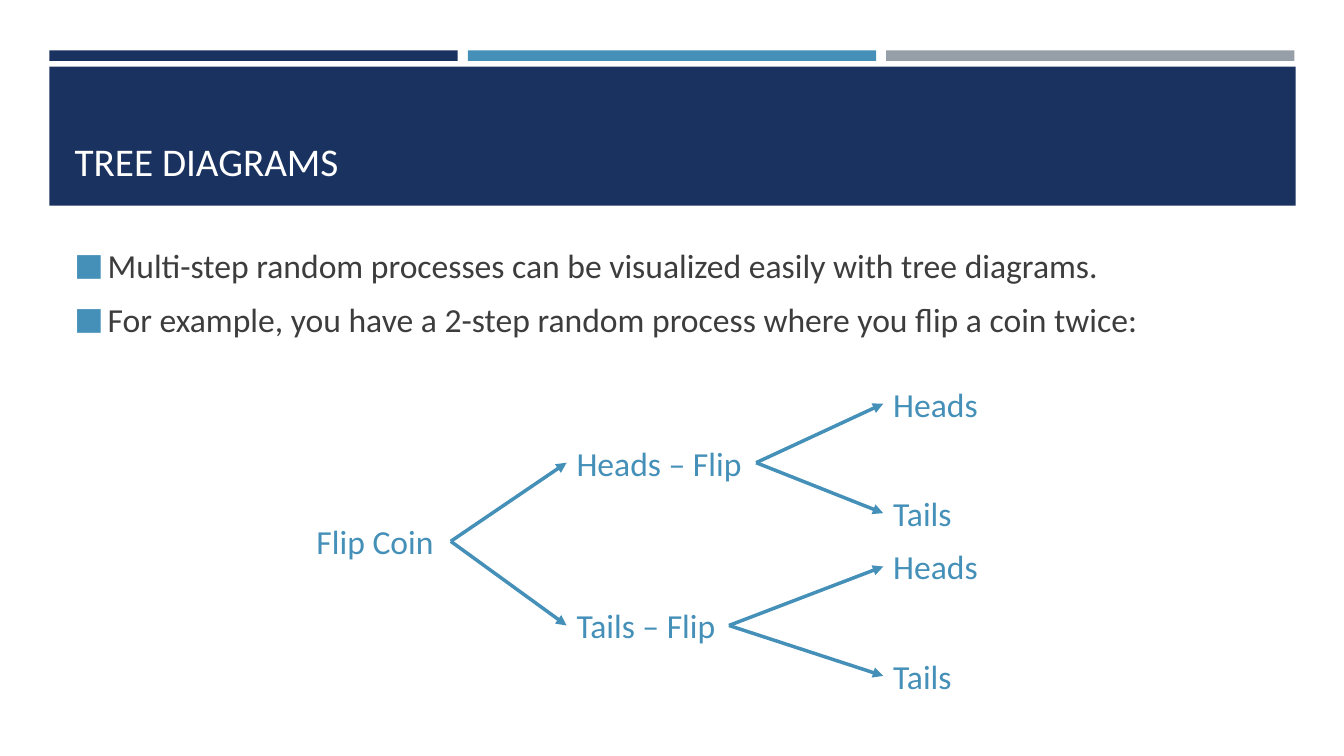
from dataclasses import dataclass

from lxml import etree
from pptx import Presentation
from pptx.dml.color import RGBColor
from pptx.enum.shapes import MSO_CONNECTOR, MSO_SHAPE
from pptx.enum.text import MSO_ANCHOR, MSO_AUTO_SIZE, PP_ALIGN
from pptx.oxml.ns import qn
from pptx.util import Inches, Pt

RECT = MSO_SHAPE.RECTANGLE
STRAIGHT = MSO_CONNECTOR.STRAIGHT
LEFT = PP_ALIGN.LEFT
TOP, BOTTOM = MSO_ANCHOR.TOP, MSO_ANCHOR.BOTTOM
FIXED, GROW = MSO_AUTO_SIZE.NONE, MSO_AUTO_SIZE.SHAPE_TO_FIT_TEXT
LEFT_SIDE, RIGHT_SIDE = 1, 3


@dataclass(frozen=True)
class Theme:
    """Colours, font and type sizes of the slide."""
    navy: str = "1A3260"
    blue: str = "4590B8"
    grey: str = "969FA7"
    white: str = "FFFFFF"
    ink: str = "3D3D3D"
    font: str = "Calibri"
    title_size: int = 28
    text_size: int = 24
    arrow_width: float = 2.5


class Deck:
    """Draws elements on one slide, with lengths in percent of its size."""

    def __init__(self, prs, theme):
        """Add a title-only slide."""
        self.prs, self.theme = prs, theme
        self.s = prs.slides.add_slide(prs.slide_layouts[5])

    def box(self, x, y, w, h):
        """Turn percentages into lengths."""
        width, height = self.prs.slide_width, self.prs.slide_height
        return [int(v * size / 100) for v, size in
                ((x, width), (y, height), (w, width), (h, height))]

    def style(self, p, size, color):
        """Format every run of a paragraph."""
        p.alignment = LEFT
        for r in p.runs:
            r.font.name = self.theme.font
            r.font.size = Pt(size)
            r.font.color.rgb = RGBColor.from_string(color)

    def bar(self, area, color):
        """Add a plain filled rectangle."""
        sp = self.s.shapes.add_shape(RECT, *self.box(*area))
        sp.shadow.inherit = False
        sp.fill.solid()
        sp.fill.fore_color.rgb = RGBColor.from_string(color)
        sp.line.fill.background()

    def title(self, area, text):
        """Place the title in front of the shapes drawn so far."""
        sp = self.s.shapes.title
        sp.left, sp.top, sp.width, sp.height = self.box(*area)
        tf = sp.text_frame
        tf.text = text
        tf.auto_size, tf.vertical_anchor = FIXED, BOTTOM
        self.style(tf.paragraphs[0], self.theme.title_size, self.theme.white)
        sp.element.getparent().append(sp.element)

    def bullets(self, area, lines):
        """Add a text box with square bullets."""
        tf = self.s.shapes.add_textbox(*self.box(*area)).text_frame
        tf.word_wrap, tf.vertical_anchor = True, TOP
        tf.text = "\n".join(lines)
        for p in tf.paragraphs:
            self.style(p, self.theme.text_size, self.theme.ink)
            p.space_before, p.space_after = Pt(4), Pt(6)
            pPr = p._p.get_or_add_pPr()
            pPr.set("marL", str(Inches(0.33)))
            pPr.set("indent", str(Inches(-0.33)))
            color = etree.SubElement(pPr, qn("a:buClr"))
            etree.SubElement(color, qn("a:srgbClr"), val=self.theme.blue)
            etree.SubElement(pPr, qn("a:buSzPct"), val="92000")
            etree.SubElement(pPr, qn("a:buFont"), typeface=self.theme.font)
            etree.SubElement(pPr, qn("a:buChar"), char="■")

    def label(self, area, text):
        """Add a one-line text box that fits its text."""
        sp = self.s.shapes.add_textbox(*self.box(*area))
        tf = sp.text_frame
        tf.word_wrap, tf.auto_size = False, GROW
        tf.text = text
        self.style(tf.paragraphs[0], self.theme.text_size, self.theme.blue)
        return sp

    def arrow(self, start, end):
        """Join the right side of one label to the left side of another."""
        c = self.s.shapes.add_connector(STRAIGHT, 0, 0, 0, 0)
        c.begin_connect(start, RIGHT_SIDE)
        c.end_connect(end, LEFT_SIDE)
        c.line.color.rgb = RGBColor.from_string(self.theme.blue)
        c.line.width = Pt(self.theme.arrow_width)
        spPr = c.element.spPr
        etree.SubElement(spPr.find(qn("a:ln")), qn("a:tailEnd"), type="triangle")
        etree.SubElement(spPr, qn("a:effectLst"))

    def tree(self, node, level=0):
        """Add a node, its branches and the arrows to them."""
        text, y, branches = node
        sp = self.label((LEVELS[level], y, WIDTHS[text], 6.67), text)
        for branch in branches:
            self.arrow(sp, self.tree(branch, level + 1))
        return sp


LEVELS = (22.81, 42.16, 65.72)
WIDTHS = {"Flip Coin": 10.73, "Heads – Flip": 14.1, "Tails – Flip": 12.08,
          "Heads": 7.88, "Tails": 5.85}
SECOND_FLIPS = [
    (f"{side} – Flip", y, [("Heads", y - 7.8, []), ("Tails", y + 6.67, [])])
    for side, y in (("Heads", 57.87), ("Tails", 79.4))
]
COIN_TREE = ("Flip Coin", 68.27, SECOND_FLIPS)
BULLETS = (
    "Multi-step random processes can be visualized easily with tree diagrams.",
    "For example, you have a 2-step random process where you flip a coin twice:",
)


def main():
    """Build and save the slide."""
    prs = Presentation()
    prs.slide_width, prs.slide_height = Inches(13.33), Inches(7.5)
    theme = Theme()
    deck = Deck(prs, theme)
    for i, color in enumerate((theme.navy, theme.blue, theme.grey)):
        deck.bar((3.68 + 31.13 * i, 6.67, 30.38, 1.4), color)
    deck.bar((3.68, 8.8, 92.72, 18.4), theme.navy)
    deck.title((4.8, 10.67, 90.47, 14.4), "TREE DIAGRAMS")
    deck.bullets((4.8, 31.73, 90.47, 64.4), BULLETS)
    deck.tree(COIN_TREE)
    prs.save("out.pptx")


if __name__ == "__main__":
    main()
